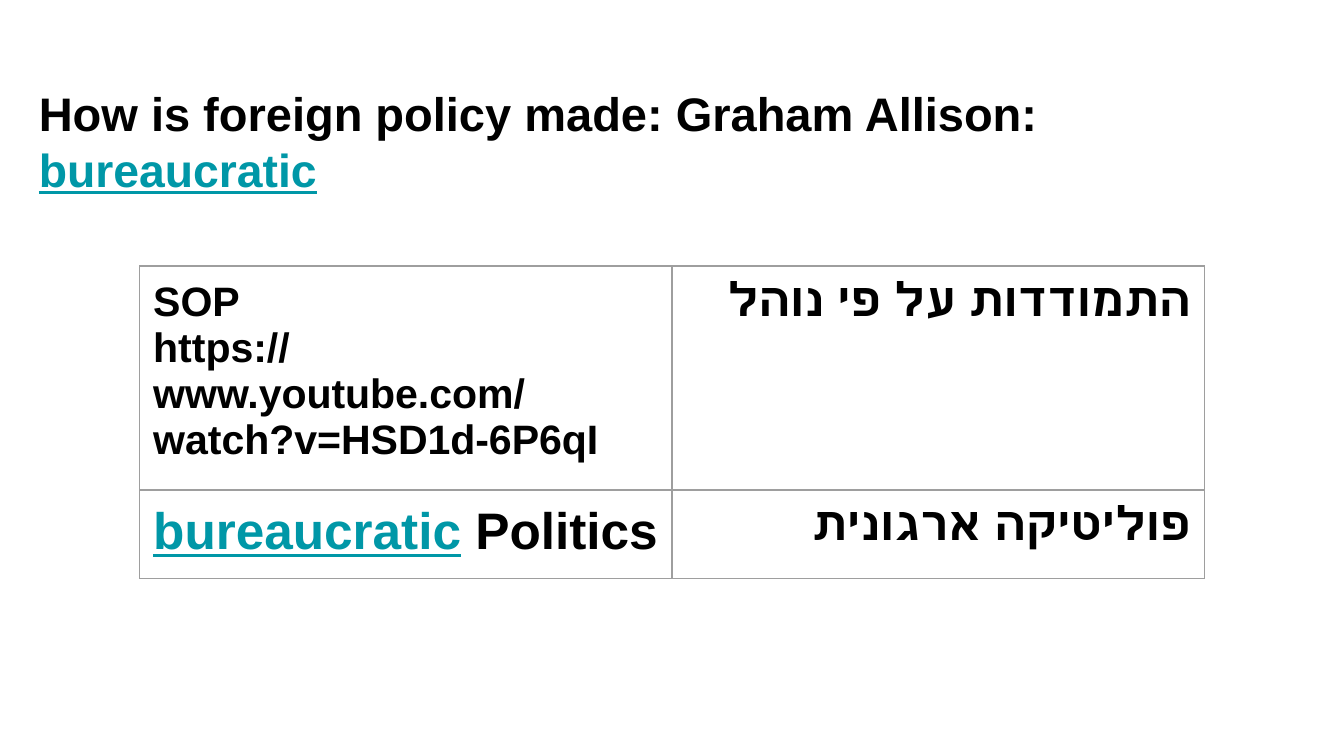
from dataclasses import dataclass

from lxml.etree import SubElement
from pptx import Presentation
from pptx.dml.color import RGBColor
from pptx.enum.text import PP_ALIGN
from pptx.oxml.ns import qn
from pptx.slide import Slide
from pptx.util import Inches, Pt

BLACK = RGBColor(0x00, 0x00, 0x00)
TEAL = RGBColor(0x00, 0x97, 0xA7)
GREY = RGBColor(0x9E, 0x9E, 0x9E)
FONT = "Arial"
SLIDE_WIDTH = Inches(10)
SLIDE_HEIGHT = SLIDE_WIDTH * 9 // 16
INSET = Inches(0.1)
COLUMN_WIDTH = Inches(3.96)
ROW_HEIGHT = Inches(0.42)


@dataclass(frozen=True)
class Run:
    """A stretch of bold text."""

    text: str
    size: float
    term: bool = False


@dataclass(frozen=True)
class Line:
    """A paragraph made of runs."""

    runs: tuple[Run, ...]
    hebrew: bool = False


TITLE = Line((
    Run("How is foreign policy made: Graham Allison: ", 25.2),
    Run("bureaucratic", 24.8, term=True),
))
ROWS = (
    (
        (Line((Run("SOP", 22),)), Line((Run("https://www.youtube.com/watch?v=HSD1d-6P6qI", 22),))),
        (Line((Run("התמודדות על פי נוהל", 25),), hebrew=True),),
    ),
    (
        (Line((Run("bureaucratic", 27.5, term=True), Run(" Politics", 27.5))),),
        (Line((Run("פוליטיקה ארגונית", 25),), hebrew=True),),
    ),
)


def set_margins(holder) -> None:
    """Give a text frame or a cell equal margins."""
    holder.margin_left = holder.margin_right = INSET
    holder.margin_top = holder.margin_bottom = INSET


def write_lines(frame, lines: tuple[Line, ...]) -> None:
    """Fill a text frame with formatted paragraphs."""
    for index, line in enumerate(lines):
        paragraph = frame.add_paragraph() if index else frame.paragraphs[0]
        paragraph.alignment = PP_ALIGN.RIGHT if line.hebrew else PP_ALIGN.LEFT
        if line.hebrew:
            paragraph._p.get_or_add_pPr().set("rtl", "1")
        for part in line.runs:
            run = paragraph.add_run()
            run.text = part.text
            run.font.name = FONT
            run.font.size = Pt(part.size)
            run.font.bold = True
            run.font.underline = part.term
            run.font.color.rgb = TEAL if part.term else BLACK


def outline_cell(cell) -> None:
    """Clear the fill of a cell and draw thin grey borders."""
    properties = cell._tc.get_or_add_tcPr()
    for side in ("a:lnL", "a:lnR", "a:lnT", "a:lnB"):
        border = SubElement(properties, qn(side), w=str(Pt(0.75)))
        fill = SubElement(border, qn("a:solidFill"))
        SubElement(fill, qn("a:srgbClr"), val=str(GREY))
    cell.fill.background()


def add_title(slide: Slide) -> None:
    """Add the slide heading."""
    box = slide.shapes.add_textbox(
        Inches(0.19), Inches(0.53), Inches(9.32), Inches(0.63)
    )
    box.text_frame.word_wrap = True
    set_margins(box.text_frame)
    write_lines(box.text_frame, (TITLE,))


def add_terms_table(slide: Slide) -> None:
    """Add the table of English and Hebrew terms."""
    columns = len(ROWS[0])
    table = slide.shapes.add_table(
        len(ROWS), columns, Inches(1.04), Inches(1.98),
        COLUMN_WIDTH * columns, ROW_HEIGHT * len(ROWS),
    ).table
    table.first_row = table.horz_banding = False
    for row_index, row in enumerate(ROWS):
        for column_index, lines in enumerate(row):
            cell = table.cell(row_index, column_index)
            outline_cell(cell)
            set_margins(cell)
            write_lines(cell.text_frame, lines)


def main() -> None:
    """Build and save the slide."""
    presentation = Presentation()
    presentation.slide_width = SLIDE_WIDTH
    presentation.slide_height = SLIDE_HEIGHT
    slide = presentation.slides.add_slide(presentation.slide_layouts[6])
    add_title(slide)
    add_terms_table(slide)
    presentation.save("out.pptx")


if __name__ == "__main__":
    main()
